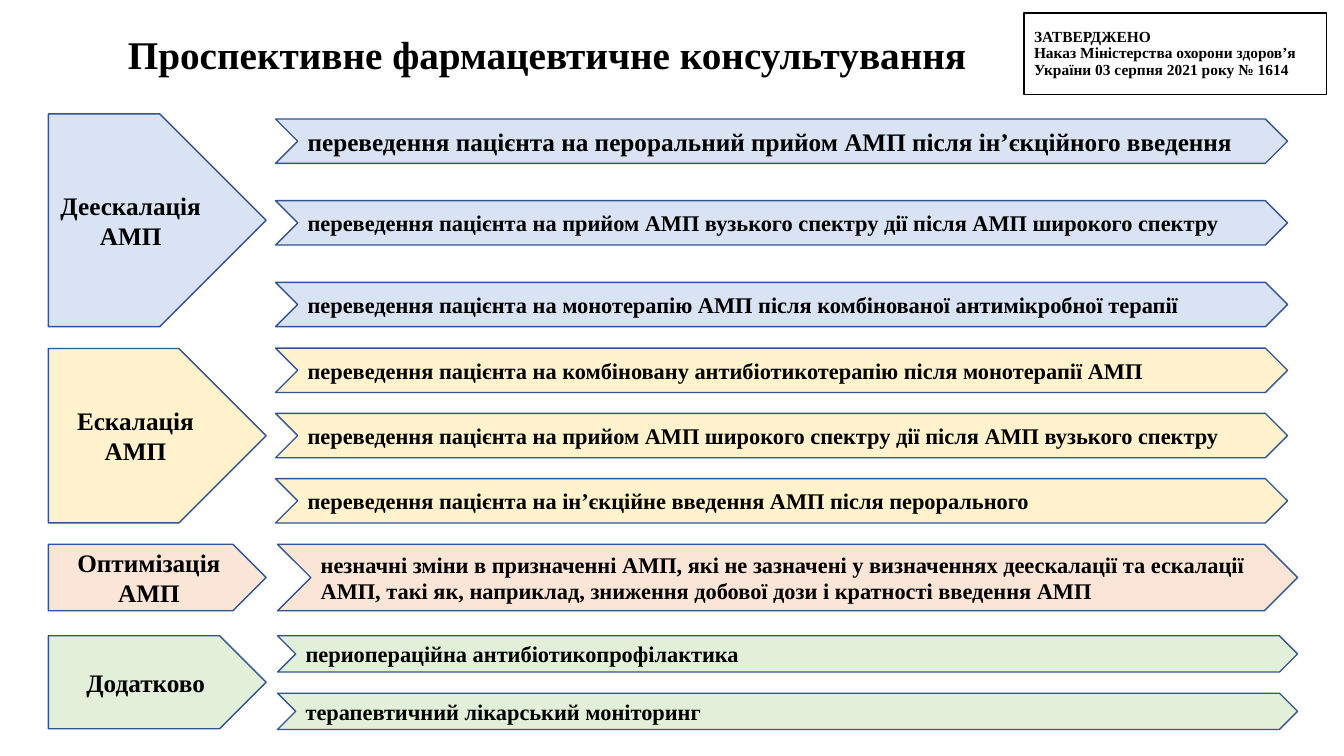
from pptx import Presentation
from pptx.dml.color import RGBColor
from pptx.enum.shapes import MSO_SHAPE
from pptx.enum.text import MSO_ANCHOR, MSO_AUTO_SIZE, PP_ALIGN
from pptx.util import Inches, Pt

BLACK = RGBColor(0x00, 0x00, 0x00)
NAVY = RGBColor(0x32, 0x54, 0x91)
BLUE = RGBColor(0xDA, 0xE3, 0xF3)
GOLD = RGBColor(0xFF, 0xF2, 0xCC)
PEACH = RGBColor(0xFB, 0xE5, 0xD6)
GREEN = RGBColor(0xE2, 0xF0, 0xD9)
RECT, PLATE, ARROW = MSO_SHAPE.RECTANGLE, MSO_SHAPE.PENTAGON, MSO_SHAPE.CHEVRON
LEFT, CENTER = PP_ALIGN.LEFT, PP_ALIGN.CENTER
MIDDLE = MSO_ANCHOR.MIDDLE
FIXED = MSO_AUTO_SIZE.NONE

WIDE = (20.5, 75.3)
LONG = (20.65, 75.9)
GROUPS = [
    ("Деескалація АМП", BLUE, (15.07, 28.13), WIDE, (15.75, 5.87, 10.8), [
        ("переведення пацієнта на пероральний прийом АМП після ін’єкційного введення", 18),
        ("переведення пацієнта на прийом АМП вузького спектру дії після АМП широкого спектру", 16),
        ("переведення пацієнта на монотерапію АМП після комбінованої антимікробної терапії", 16),
    ]),
    ("Ескалація АМП", GOLD, (46.1, 23.07), WIDE, (46.05, 5.87, 8.63), [
        ("переведення пацієнта на комбіновану антибіотикотерапію після монотерапії АМП", 16),
        ("переведення пацієнта на прийом АМП широкого спектру дії після АМП вузького спектру", 16),
        ("переведення пацієнта на ін’єкційне введення АМП після перорального", 16),
    ]),
    ("Оптимізація АМП", PEACH, (72, 8.8), LONG, (72, 8.8, 0), [
        ("незначні зміни в призначенні АМП, які не зазначені у визначеннях деескалації та ескалації "
         "АМП, такі як, наприклад, зниження добової дози і кратності введення АМП", 16),
    ]),
    ("Додатково", GREEN, (84.1, 12.3), LONG, (84.1, 4.8, 7.6), [
        ("периопераційна антибіотикопрофілактика", 16),
        ("терапевтичний лікарський моніторинг", 16),
    ]),
]


def write(shape, text, size=16, align=LEFT, space=1.0):
    frame = shape.text_frame
    frame.word_wrap = True
    frame.auto_size = FIXED
    frame.vertical_anchor = MIDDLE
    para = frame.paragraphs[0]
    para.text = text
    para.alignment = align
    para.line_spacing = space
    for run in para.runs:
        font = run.font
        font.name, font.size, font.bold = "Times New Roman", Pt(size), True
        font.color.rgb = BLACK


class Board:
    """Draws styled parts on one slide, placed in percent of its size."""

    def __init__(self, deck):
        self.deck = deck
        self.slide = deck.slides.add_slide(deck.slide_layouts[5])

    def place(self, x, y, w, h):
        wide, high = self.deck.slide_width, self.deck.slide_height
        return [round(part * side / 100)
                for part, side in zip((x, y, w, h), (wide, high, wide, high))]

    def title(self, text, *box):
        shape = self.slide.shapes.title
        shape.left, shape.top, shape.width, shape.height = self.place(*box)
        write(shape, text, size=28, align=CENTER)

    def block(self, kind, text, box, fill=None, line=NAVY, **style):
        shape = self.slide.shapes.add_shape(kind, *self.place(*box))
        shape.shadow.inherit = False
        if fill is None:
            shape.fill.background()
        else:
            shape.fill.solid()
            shape.fill.fore_color.rgb = fill
        shape.line.color.rgb = line
        shape.line.width = Pt(1)
        write(shape, text, **style)

    def group(self, name, fill, span, across, rows, items):
        self.block(PLATE, name, (3.6, span[0], 16.2, span[1]), fill, size=18, align=CENTER)
        top, high, step = rows
        left, wide = across
        for i, (text, size) in enumerate(items):
            self.block(ARROW, text, (left, top + i * step, wide, high), fill, size=size)


def main():
    deck = Presentation()
    deck.slide_width, deck.slide_height = Inches(13.33), Inches(7.5)
    board = Board(deck)
    board.title("Проспективне фармацевтичне консультування", 7.35, 3.33, 66.7, 7.6)
    board.block(RECT, "ЗАТВЕРДЖЕНО\vНаказ Міністерства охорони здоров’я України 03 серпня 2021 року № 1614",
                (76.2, 1.73, 22.5, 10.8), line=BLACK, size=11, space=0.9)
    for group in GROUPS:
        board.group(*group)
    deck.save("out.pptx")


if __name__ == "__main__":
    main()
